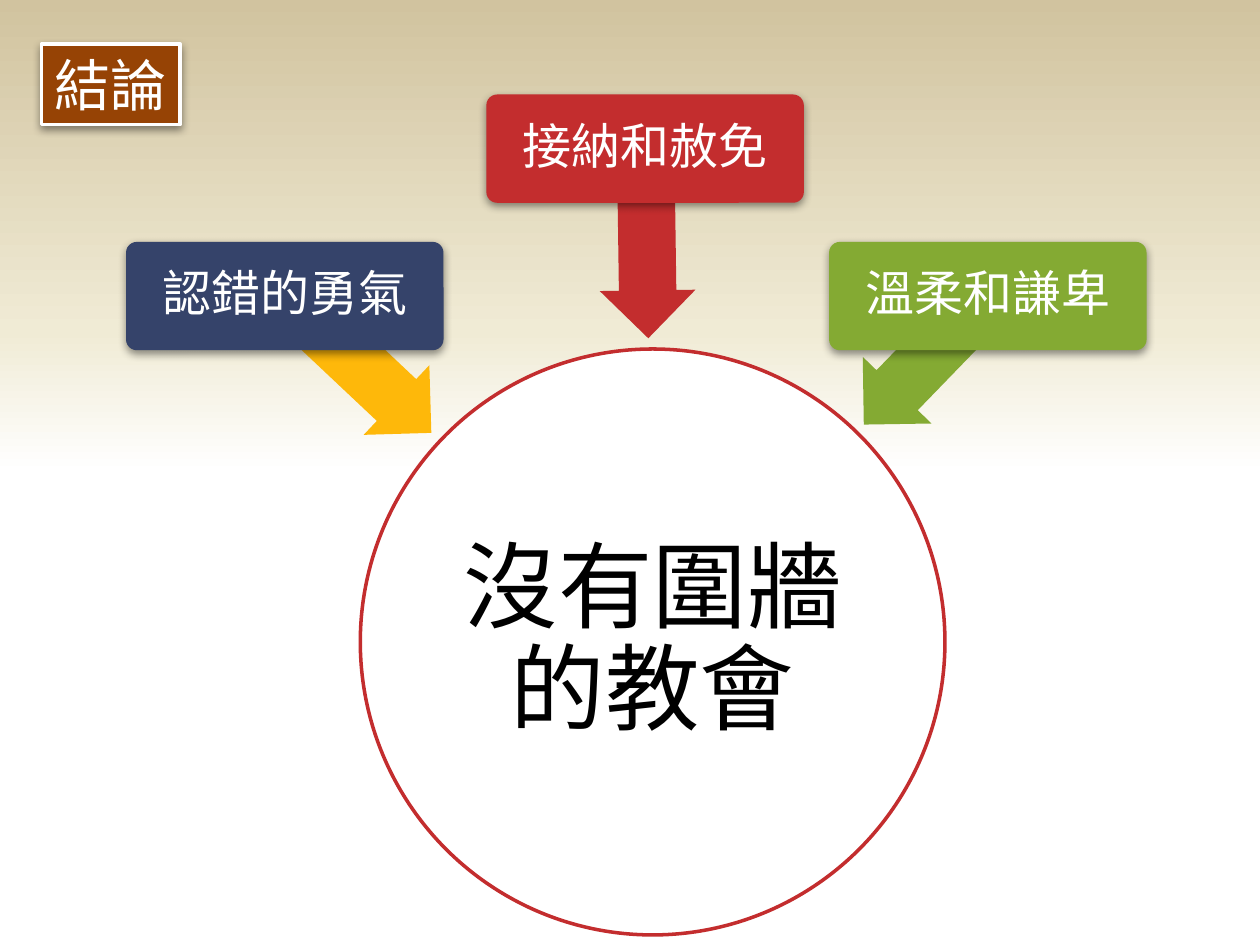
"""Build the conclusion slide: three virtues pointing to a church without walls."""
from dataclasses import dataclass

import lxml.etree
import pptx
import pptx.dml.color
import pptx.enum.shapes
import pptx.enum.text
import pptx.oxml
import pptx.oxml.ns
import pptx.util

Inches = pptx.util.Inches
Shape = pptx.enum.shapes.MSO_SHAPE
Text = pptx.enum.text


@dataclass(frozen=True)
class Theme:
    """Colours, fonts and type sizes of the slide."""
    white: str = "FFFFFF"
    black: str = "000000"
    brown: str = "964305"
    red: str = "C32D2E"
    navy: str = "35436A"
    gold: str = "FEB80A"
    green: str = "84AA33"
    sky: tuple = ((50, "FFFFFF"), (65, "F0EBD5"), (100, "D1C39F"))
    heading_font: str = "Arial"
    label_font: str = "Calibri"
    heading_size: int = 32
    goal_size: int = 54
    label_size: int = 28


THEME = Theme()


def rgb(code):
    """Return the colour for a hex code."""
    return pptx.dml.color.RGBColor.from_string(code)


def apply_format(target, values):
    """Set every attribute named in a dict of format values."""
    for name, value in values.items():
        setattr(target, name, value)


def paint_background(page, stops):
    """Fill the page with a gradient that rises from the bottom edge."""
    fill = page.background.fill
    fill.gradient()
    fill.gradient_angle = 90
    stop_list = page.background._cSld.find(".//" + pptx.oxml.ns.qn("a:gsLst"))
    for old_stop in list(stop_list):
        stop_list.remove(old_stop)
    for position, colour in stops:
        stop = lxml.etree.SubElement(stop_list, pptx.oxml.ns.qn("a:gs"), pos=str(position * 1000))
        lxml.etree.SubElement(stop, pptx.oxml.ns.qn("a:srgbClr"), val=colour)


def add_shadow(shape):
    """Give the shape a soft shadow straight below it."""
    namespace = pptx.oxml.ns.nsdecls("a")
    effects = shape._element.spPr.find(pptx.oxml.ns.qn("a:effectLst"))
    effects.append(pptx.oxml.parse_xml(
        f'<a:outerShdw {namespace} blurRad="63500" dist="25400" dir="5400000" rotWithShape="0">'
        f'<a:srgbClr val="{THEME.black}"><a:alpha val="43000"/></a:srgbClr></a:outerShdw>'))


def add_figure(page, kind, area, fill, line=None, adjust=(), shadow=False):
    """Add a filled preset shape with an optional outline and shadow."""
    shape = page.shapes.add_shape(kind, *map(Inches, area))
    shape.shadow.inherit = False
    shape.fill.solid()
    shape.fill.fore_color.rgb = rgb(fill)
    if line:
        shape.line.color.rgb = rgb(line)
        shape.line.width = pptx.util.Pt(2)
    else:
        shape.line.fill.background()
    for index, value in enumerate(adjust):
        shape.adjustments[index] = value
    if shadow:
        add_shadow(shape)
    return shape


def write_text(shape, words, font, size, colour, frame_format, spacing=1.0):
    """Write one centred paragraph into a shape."""
    box = shape.text_frame
    apply_format(box, {"vertical_anchor": Text.MSO_ANCHOR.MIDDLE, **frame_format})
    para = box.paragraphs[0]
    apply_format(para, {"alignment": Text.PP_ALIGN.CENTER, "line_spacing": spacing})
    span = para.add_run()
    span.text = words
    apply_format(span.font, {"name": font, "size": pptx.util.Pt(size)})
    span.font.color.rgb = rgb(colour)


def wrapped(margin):
    """Return frame values for wrapped text with equal margins."""
    sides = ("left", "top", "right", "bottom")
    return {"word_wrap": True, **{f"margin_{side}": Inches(margin) for side in sides}}


def add_heading(page, words):
    """Add the framed heading in the top left corner."""
    shape = add_figure(page, Shape.RECTANGLE, (0.33, 0.35, 1.1, 0.64),
                       THEME.brown, THEME.white, shadow=True)
    write_text(shape, words, THEME.heading_font, THEME.heading_size, THEME.white,
               {"word_wrap": False, "auto_size": Text.MSO_AUTO_SIZE.SHAPE_TO_FIT_TEXT})


def add_goal(page, words):
    """Add the large circle that the arrows point to."""
    shape = add_figure(page, Shape.OVAL, (2.86, 2.77, 4.64, 4.65), THEME.white, THEME.red)
    write_text(shape, words, THEME.heading_font, THEME.goal_size, THEME.black,
               wrapped(0.04), 0.9)


def add_arrow(page, left, top, length, turn, colour):
    """Add a block arrow turned towards the circle."""
    shape = add_figure(page, Shape.LEFT_ARROW, (left, top, length, 0.76), colour,
                       adjust=(0.6, 0.5))
    shape.rotation = turn


def add_label(page, left, top, words, colour):
    """Add a rounded label that names one virtue."""
    shape = add_figure(page, Shape.ROUNDED_RECTANGLE, (left, top, 2.52, 0.86), colour,
                       adjust=(0.1,), shadow=True)
    write_text(shape, words, THEME.label_font, THEME.label_size, THEME.white,
               wrapped(0.06), 0.9)


def main():
    """Build the deck and save it."""
    deck = pptx.Presentation()
    apply_format(deck, {"slide_width": Inches(10), "slide_height": Inches(7.5)})
    page = deck.slides.add_slide(deck.slide_layouts[6])
    paint_background(page, THEME.sky)
    add_heading(page, "結論")
    add_goal(page, "沒有圍牆的教會")
    virtues = (
        ((1, 1.92, "認錯的勇氣", THEME.navy), (2.05, 2.51, 1.59, 223.3, THEME.gold)),
        ((3.86, 0.75, "接納和赦免", THEME.red), (4.38, 1.55, 1.51, 269.2, THEME.red)),
        ((6.58, 1.92, "溫柔和謙卑", THEME.green), (6.64, 2.48, 1.42, 314.1, THEME.green)),
    )
    for label, arrow in virtues:
        add_arrow(page, *arrow)
        add_label(page, *label)
    deck.save("out.pptx")


if __name__ == "__main__":
    main()
